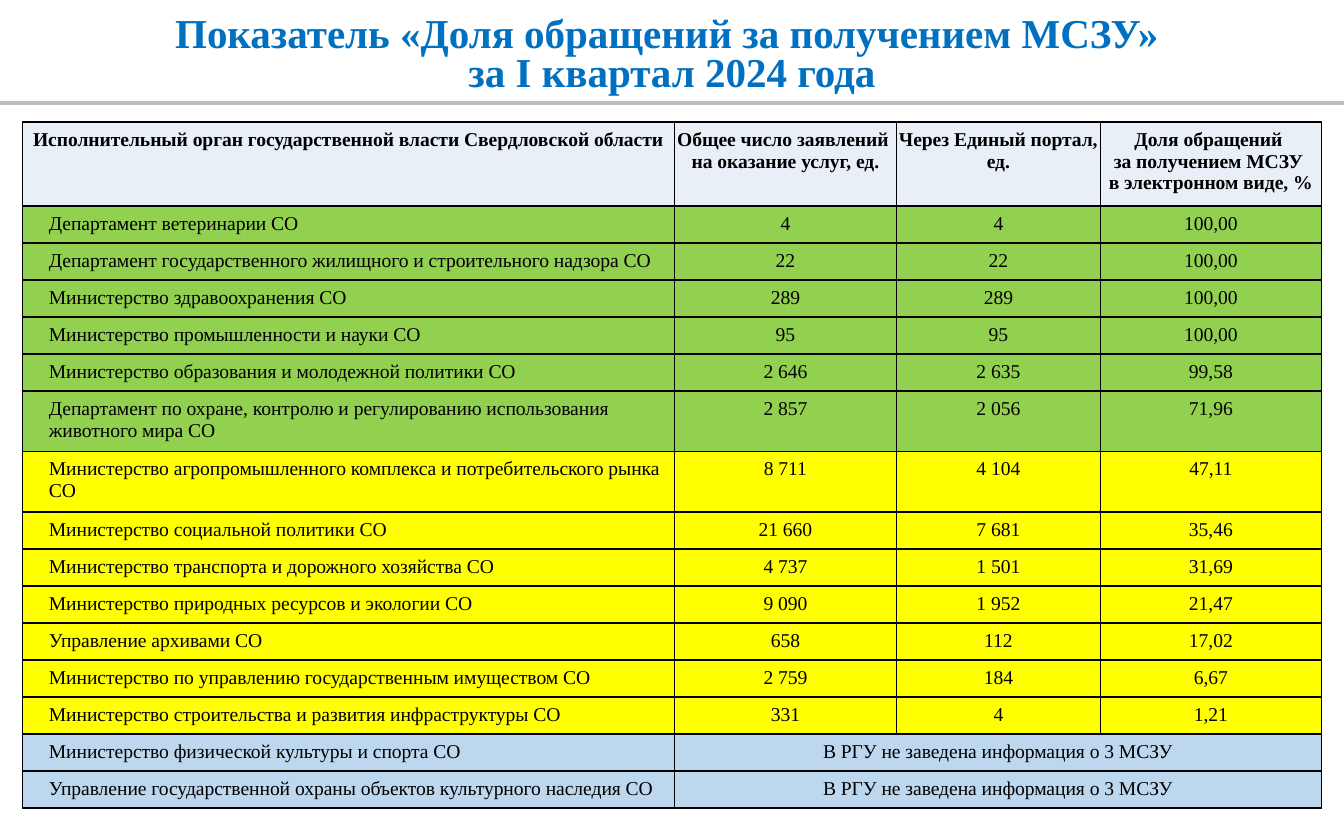
from lxml.etree import SubElement
from pptx import Presentation
from pptx.dml.color import RGBColor
from pptx.enum.shapes import MSO_CONNECTOR
from pptx.enum.text import MSO_AUTO_SIZE, PP_ALIGN
from pptx.oxml.ns import qn
from pptx.util import Pt

FONT = "Times New Roman"
BLACK = RGBColor(0x00, 0x00, 0x00)
TITLE_BLUE = RGBColor(0x00, 0x70, 0xC0)
RULE_GRAY = RGBColor(0xBF, 0xBF, 0xBF)
HEADER_TINT = RGBColor(0xE9, 0xEF, 0xF7)
GREEN = RGBColor(0x92, 0xD0, 0x50)
YELLOW = RGBColor(0xFF, 0xFF, 0x00)
BLUE = RGBColor(0xBD, 0xD7, 0xEE)

SLIDE_WIDTH, SLIDE_HEIGHT = 720, 450
TITLE = ["Показатель «Доля обращений за получением МСЗУ» ", "за I квартал 2024 года"]
HEADERS = [
    ["Исполнительный орган государственной власти Свердловской области"],
    ["Общее число заявлений ", "на оказание услуг, ед."],
    ["Через Единый портал, ед."],
    ["Доля обращений ", "за получением МСЗУ ", "в электронном виде, %"],
]
NO_DATA = "В РГУ не заведена информация о 3 МСЗУ"
GROUPS = [
    (GREEN, [
        ("Департамент ветеринарии СО", "4", "4", "100,00"),
        ("Департамент государственного жилищного и строительного надзора СО",
         "22", "22", "100,00"),
        ("Министерство здравоохранения СО", "289", "289", "100,00"),
        ("Министерство промышленности и науки СО", "95", "95", "100,00"),
        ("Министерство образования и молодежной политики СО",
         "2 646", "2 635", "99,58"),
        ("Департамент по охране, контролю и регулированию использования "
         "животного мира СО", "2 857", "2 056", "71,96"),
    ]),
    (YELLOW, [
        ("Министерство агропромышленного комплекса и потребительского рынка СО",
         "8 711", "4 104", "47,11"),
        ("Министерство социальной политики СО", "21 660", "7 681", "35,46"),
        ("Министерство транспорта и дорожного хозяйства СО",
         "4 737", "1 501", "31,69"),
        ("Министерство природных ресурсов и экологии СО",
         "9 090", "1 952", "21,47"),
        ("Управление архивами СО", "658", "112", "17,02"),
        ("Министерство по управлению государственным имуществом СО",
         "2 759", "184", "6,67"),
        ("Министерство строительства и развития инфраструктуры СО",
         "331", "4", "1,21"),
    ]),
    (BLUE, [
        ("Министерство физической культуры и спорта СО", NO_DATA),
        ("Управление государственной охраны объектов культурного наследия СО",
         NO_DATA),
    ]),
]
COLUMN_SHARES = [349.3, 118.9, 109.3, 118.4]
HEADER_HEIGHT, ROW_HEIGHT, TWO_LINE_HEIGHT = 45, 19.82, 32.4
TWO_LINE_ROWS = (6, 7)


def write_lines(paragraph, lines, size, color, bold=False):
    for index, line in enumerate(lines):
        if index:
            paragraph.add_line_break()
        run = paragraph.add_run()
        run.text = line
        run.font.name = FONT
        run.font.size = Pt(size)
        run.font.bold = bold
        run.font.color.rgb = color


def add_title(slide, left, top, width, height):
    heading = slide.shapes.add_textbox(Pt(left), Pt(top), Pt(width), Pt(height))
    frame = heading.text_frame
    frame.word_wrap = True
    frame.auto_size = MSO_AUTO_SIZE.SHAPE_TO_FIT_TEXT
    paragraph = frame.paragraphs[0]
    paragraph.alignment = PP_ALIGN.CENTER
    paragraph.line_spacing = 0.8
    write_lines(paragraph, TITLE, 22, TITLE_BLUE, bold=True)

    # Rule under the title
    rule_y = Pt(top + height + 0.7)
    rule = slide.shapes.add_connector(
        MSO_CONNECTOR.STRAIGHT, Pt(left), rule_y, Pt(left + width), rule_y)
    rule.line.color.rgb = RULE_GRAY
    rule.line.width = Pt(2.5)
    SubElement(rule.element.spPr, qn("a:effectLst"))


def outline_cell(cell):
    properties = cell._tc.get_or_add_tcPr()
    for side in ("lnL", "lnR", "lnT", "lnB"):
        border = SubElement(properties, qn(f"a:{side}"), w=str(Pt(0.96)))
        fill = SubElement(border, qn("a:solidFill"))
        SubElement(fill, qn("a:srgbClr"), val=str(BLACK))


def fill_cell(cell, lines, color, bold=False, name=False):
    cell.margin_left = Pt(14.2 if name else 0.7)
    cell.margin_right = Pt(0.7)
    cell.margin_top = cell.margin_bottom = Pt(3.6)
    cell.fill.solid()
    cell.fill.fore_color.rgb = color
    paragraph = cell.text_frame.paragraphs[0]
    paragraph.alignment = PP_ALIGN.LEFT if name else PP_ALIGN.CENTER
    write_lines(paragraph, lines, 10.5, BLACK, bold)


def add_share_table(slide, left, top, width, height):
    rows = [(color, row) for color, group in GROUPS for row in group]
    table = slide.shapes.add_table(
        len(rows) + 1, len(HEADERS), Pt(left), Pt(top), Pt(width), Pt(height)).table
    table.first_row = table.horz_banding = False
    for column, share in zip(table.columns, COLUMN_SHARES):
        column.width = Pt(width * share / sum(COLUMN_SHARES))
    for index, row in enumerate(table.rows):
        row.height = Pt(TWO_LINE_HEIGHT if index in TWO_LINE_ROWS else ROW_HEIGHT)
    table.rows[0].height = Pt(HEADER_HEIGHT)
    for cell in table.iter_cells():
        outline_cell(cell)

    # Header row
    for column, lines in enumerate(HEADERS):
        fill_cell(table.cell(0, column), lines, HEADER_TINT, bold=True)

    # Authorities, coloured by group
    for index, (color, values) in enumerate(rows, start=1):
        if len(values) < len(HEADERS):
            table.cell(index, 1).merge(table.cell(index, len(HEADERS) - 1))
        for column, value in enumerate(values):
            fill_cell(table.cell(index, column), [value], color, name=column == 0)


def main():
    presentation = Presentation()
    presentation.slide_width = Pt(SLIDE_WIDTH)
    presentation.slide_height = Pt(SLIDE_HEIGHT)
    slide = presentation.slides.add_slide(presentation.slide_layouts[6])
    add_title(slide, 0, 5.5, SLIDE_WIDTH, 49)
    add_share_table(slide, 12.05, 65.5, 695.9, 367.5)
    presentation.save("out.pptx")


if __name__ == "__main__":
    main()
